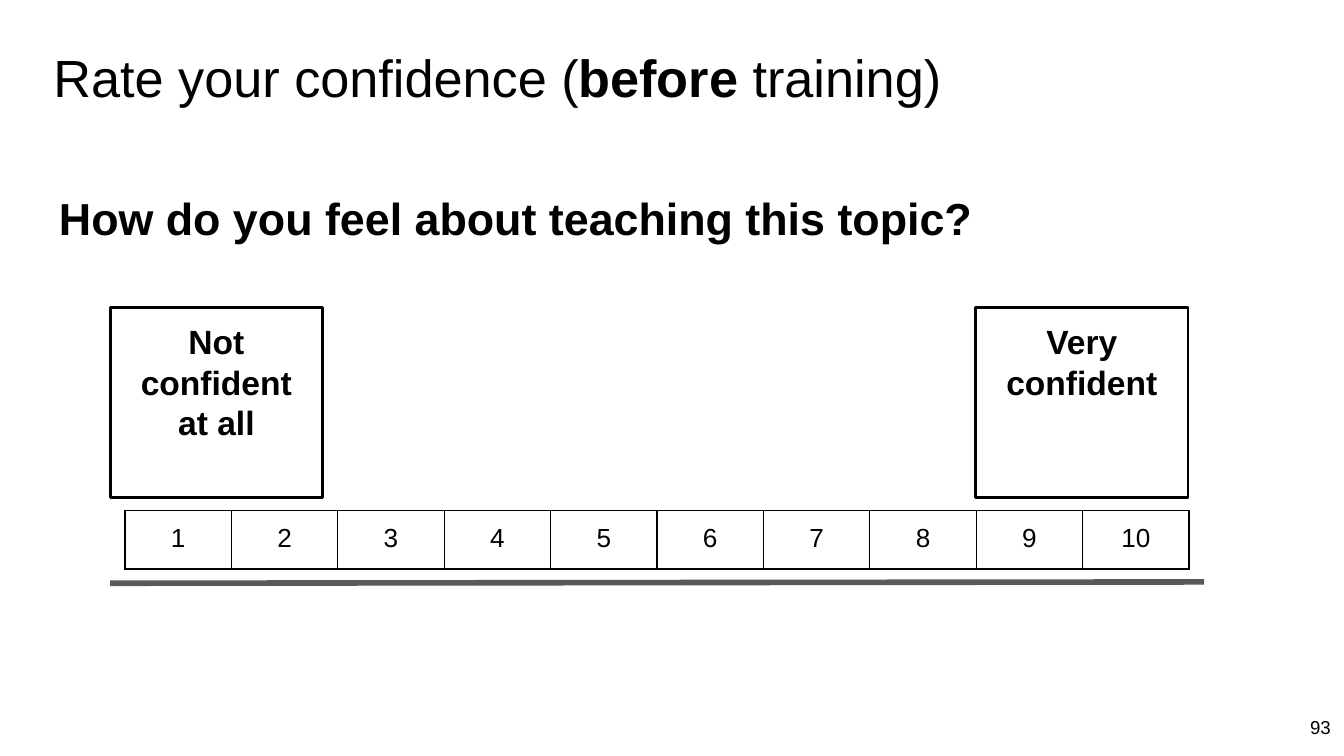
from lxml import etree
from pptx import Presentation
from pptx.dml.color import RGBColor
from pptx.enum.shapes import MSO_CONNECTOR, MSO_SHAPE
from pptx.enum.text import MSO_ANCHOR, PP_ALIGN
from pptx.oxml.ns import qn
from pptx.util import Inches, Pt

LEFT, MID, RIGHT = PP_ALIGN.LEFT, PP_ALIGN.CENTER, PP_ALIGN.RIGHT
TOP, CENTER = MSO_ANCHOR.TOP, MSO_ANCHOR.MIDDLE
RECT, LINE = MSO_SHAPE.RECTANGLE, MSO_CONNECTOR.STRAIGHT

WIDE = 10
HIGH = WIDE * 9 / 16
INK, GRAY = "000000", "595959"
STEPS, SPAN, ROW = 10, 7.92, 0.42
COL = SPAN / STEPS
GRID_X, GRID_Y = 0.93, 3.8
BOX_W, BOX_H, BOX_X, BOX_Y = 1.58, 1.41, 0.82, 2.29


def color(code):
    return RGBColor.from_string(code)


def inches(*sizes):
    return [Inches(size) for size in sizes]


def write(frame, runs, size, align=LEFT, anchor=TOP, **gaps):
    """Fill a text frame with (text, bold) runs in one paragraph."""
    pad = Inches(0.1)
    looks = {"margin_left": pad, "margin_right": pad, "margin_top": pad,
             "margin_bottom": pad, "word_wrap": True, "vertical_anchor": anchor}
    for name, value in looks.items():
        setattr(frame, name, value)
    para = frame.paragraphs[0]
    for name, value in {"alignment": align, **gaps}.items():
        setattr(para, name, value)
    for text, bold in runs:
        run = para.add_run()
        run.text = text
        for name, value in {"name": "Arial", "size": Pt(size), "bold": bold}.items():
            setattr(run.font, name, value)
        run.font.color.rgb = color(INK)


def add_text(slide, at, runs, size, **looks):
    box = slide.shapes.add_textbox(*inches(*at))
    write(box.text_frame, runs, size, **looks)


def add_box(slide, left, text):
    box = slide.shapes.add_shape(RECT, *inches(left, BOX_Y, BOX_W, BOX_H))
    box.shadow.inherit = False
    box.fill.background()
    box.line.color.rgb = color(INK)
    box.line.width = Pt(1.5)
    write(box.text_frame, [(text, True)], 18, align=MID)


def add_edges(cell):
    """Draw a thin border on all four sides of a cell."""
    props = cell._tc.get_or_add_tcPr()
    for spot, side in enumerate(("lnL", "lnR", "lnT", "lnB")):
        edge = etree.Element(qn("a:" + side), w=str(Pt(0.75)))
        fill = etree.SubElement(edge, qn("a:solidFill"))
        etree.SubElement(fill, qn("a:srgbClr"), val=INK)
        props.insert(spot, edge)


def add_scale(slide):
    frame = slide.shapes.add_table(
        1, STEPS, *inches(GRID_X, GRID_Y, SPAN, ROW))
    table = frame.table
    table.first_row = table.horz_banding = False
    table.rows[0].height = Inches(ROW)
    for step in range(STEPS):
        table.columns[step].width = Inches(COL)
        cell = table.cell(0, step)
        cell.fill.background()
        write(cell.text_frame, [(str(step + 1), False)], 14, align=MID)
        for side in ("left", "right", "top", "bottom"):
            setattr(cell, "margin_" + side, Inches(0.1))
        add_edges(cell)


def add_line(slide, *ends):
    line = slide.shapes.add_connector(LINE, *inches(*ends))
    line.line.color.rgb = color(GRAY)
    line.line.width = Pt(3)
    etree.SubElement(line._element.spPr, qn("a:effectLst"))


def main():
    deck = Presentation()
    deck.slide_width, deck.slide_height = inches(WIDE, HIGH)
    slide = deck.slides.add_slide(deck.slide_layouts[6])

    # Title and question
    add_text(slide, (0.3, 0.24, 9.36, 0.63),
             [("Rate your confidence (", False), ("before", True),
              (" training)", False)], 28)
    add_text(slide, (0.34, 1.26, 9.32, 3.74),
             [("How do you feel about teaching this topic?", True)], 24,
             line_spacing=1.15, space_after=Pt(16))

    # Ends of the scale
    add_box(slide, BOX_X, "Not confident at all")
    add_box(slide, 7.26, "Very confident")

    # Scale and its base line
    add_scale(slide)
    add_line(slide, BOX_X, 4.34, 8.96, 4.33)

    # Page number
    add_text(slide, (WIDE - 0.6, HIGH - 0.43, 0.6, 0.43), [("93", False)], 10,
             align=RIGHT, anchor=CENTER)

    deck.save("out.pptx")


if __name__ == "__main__":
    main()
